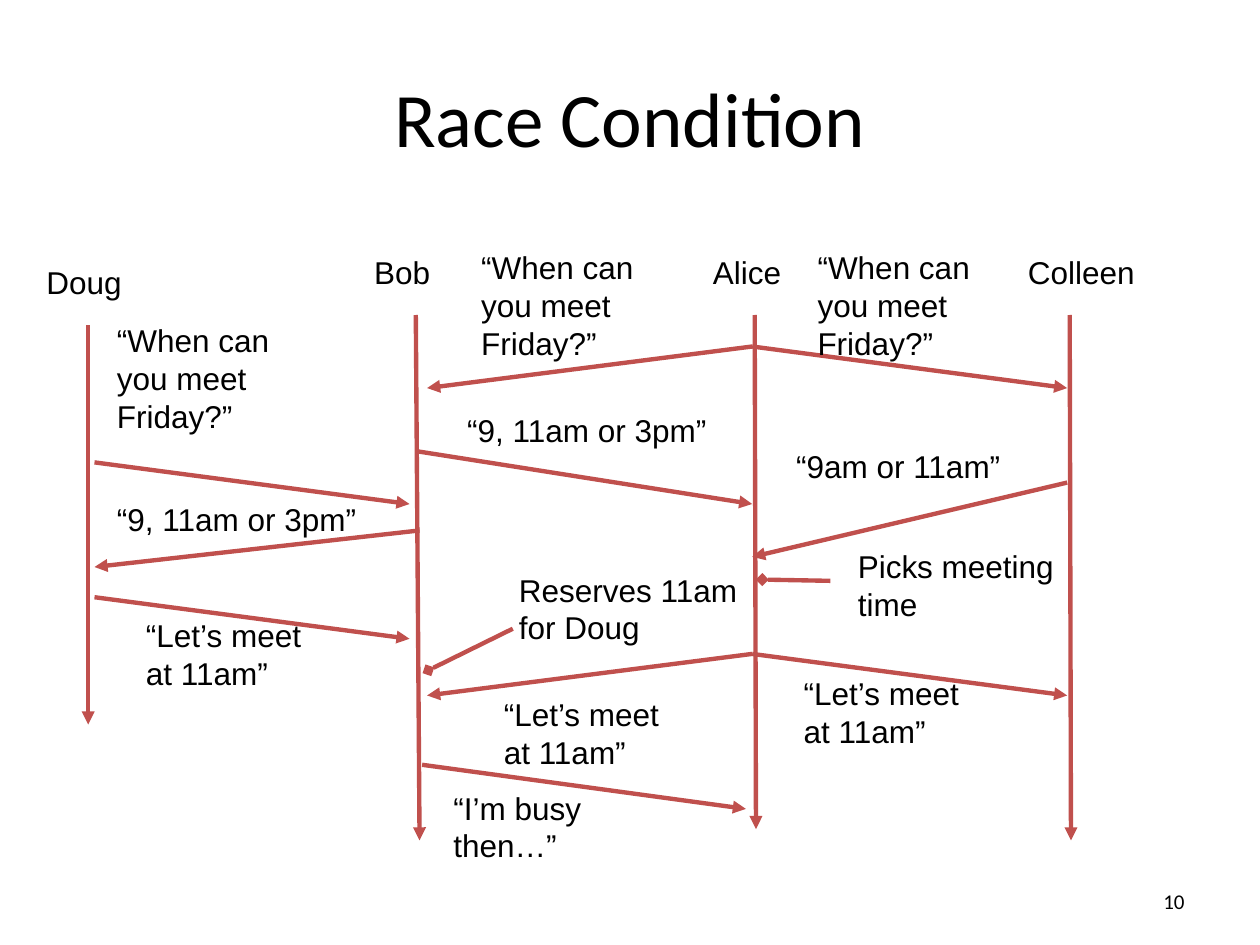
from dataclasses import dataclass

from lxml.etree import SubElement
from pptx import Presentation
from pptx.dml.color import RGBColor
from pptx.enum.shapes import MSO_CONNECTOR as Connector
from pptx.enum.text import MSO_ANCHOR as Anchor, MSO_AUTO_SIZE as AutoSize, PP_ALIGN as Align
from pptx.oxml.ns import qn
from pptx.util import Inches, Pt


@dataclass(frozen=True)
class Theme:
    """Colours, fonts and sizes of the slide."""
    ink: RGBColor = RGBColor(0x00, 0x00, 0x00)
    accent: RGBColor = RGBColor(0xC0, 0x50, 0x4D)
    heading_font: str = "Calibri"
    body_font: str = "Arial"
    title_size: int = 44
    body_size: int = 18
    number_size: int = 12
    line_width: float = 2.5


THEME = Theme()
WIDTH, HEIGHT = Inches(10), Inches(7.5)
COLUMN, ROW = WIDTH / 100, HEIGHT / 75
LINE_ROWS, PADDING_ROWS = 3, 1

ASK = "“When can you meet Friday?”"
OFFER = "“9, 11am or 3pm”"
CONFIRM = "“Let’s meet at 11am”"

LIFELINES = [
    ("Doug", (2.7, 20.4, 8), (7, 25.8), (7, 57.5)),
    ("Bob", (28.7, 19.6, 6.5), (33, 25), (33.3, 66.7)),
    ("Alice", (55.6, 19.6, 7.4), (59.9, 25), (60, 65.8)),
    ("Colleen", (80.6, 19.6, 10.5), (84.9, 25), (85, 66.7)),
]

MESSAGES = [
    (ASK, (37.2, 19.2, 15.8, 3), (59.7, 27.5), (33.9, 30.8)),
    (ASK, (63.9, 19.2, 15.8, 3), (59.7, 27.5), (84.7, 30.8)),
    (OFFER, (36.1, 32.1, 21.7, 1), (33, 35.8), (59.7, 40)),
    ("“9am or 11am”", (62.2, 35, 21.7, 1), (84.7, 38.3), (59.7, 44.2)),
    (CONFIRM, (39, 54.7, 15.8, 2), (59.7, 51.9), (33.9, 55.2)),
    (CONFIRM, (62.8, 53, 15.8, 2), (59.7, 51.9), (84.7, 55.2)),
    (ASK, (8.3, 25, 15.8, 3), (7.5, 36.7), (32.5, 40)),
    (OFFER, (8.3, 39.2, 21.7, 1), (33.3, 42.1), (7.5, 45)),
    (CONFIRM, (10.6, 48.4, 15.8, 2), (7.5, 47.4), (32.5, 50.7)),
    ("“I’m busy then…”", (35, 62.1, 15.8, 2), (33.5, 60.7), (59.2, 64.2)),
]

NOTES = [
    ("Picks meeting time", (67.1, 42.9, 17.6, 2), True, (60.5, 46), (65.9, 46.1)),
    ("Reserves 11am\nfor Doug", (40.2, 44.8, 19.5, 2), False, (34, 53.2), (40.7, 49.9)),
]


def add_text(slide, text, box, font, size, wrap=True, align=Align.LEFT, anchor=Anchor.TOP):
    """Add a text box at left, top, width and height in grid units."""
    left, top, width, height = box
    shape = slide.shapes.add_textbox(
        int(left * COLUMN), int(top * ROW), int(width * COLUMN), int(height * ROW))
    frame = shape.text_frame
    frame.text = text
    frame.word_wrap = wrap
    frame.vertical_anchor = anchor
    for paragraph in frame.paragraphs:
        paragraph.alignment = align
        paragraph.font.name = font
        paragraph.font.size = Pt(size)
        paragraph.font.color.rgb = THEME.ink
    return shape


def add_label(slide, text, place, wrap=True):
    """Add body text whose height follows its number of lines."""
    left, top, width, lines = place
    box = left, top, width, lines * LINE_ROWS + PADDING_ROWS
    shape = add_text(slide, text, box, THEME.body_font, THEME.body_size, wrap)
    shape.text_frame.auto_size = AutoSize.SHAPE_TO_FIT_TEXT


def add_line(slide, start, end, marker="tailEnd", style="triangle"):
    """Add a straight line with a marker at one of its ends."""
    line = slide.shapes.add_connector(
        Connector.STRAIGHT, int(start[0] * COLUMN), int(start[1] * ROW),
        int(end[0] * COLUMN), int(end[1] * ROW))
    line.line.color.rgb = THEME.accent
    line.line.width = Pt(THEME.line_width)
    SubElement(line.line._get_or_add_ln(), qn(f"a:{marker}"), type=style)
    SubElement(line._element.spPr, qn("a:effectLst"))


def add_lifeline(slide, name, place, start, end):
    """Add a participant's name and the time line below it."""
    add_line(slide, start, end)
    add_label(slide, name, (*place, 1), wrap=False)


def add_message(slide, text, place, start, end):
    """Add an arrow between two participants and its wording."""
    add_line(slide, start, end)
    add_label(slide, text, place)


def add_note(slide, text, place, wrap, start, end):
    """Add a remark tied to a time line by a diamond."""
    add_line(slide, start, end, "headEnd", "diamond")
    add_label(slide, text, place, wrap)


def main():
    """Build the slide and save it."""
    presentation = Presentation()
    presentation.slide_width, presentation.slide_height = WIDTH, HEIGHT
    slide = presentation.slides.add_slide(presentation.slide_layouts[6])
    add_text(slide, "Race Condition", (5, 3, 90, 12.5), THEME.heading_font,
             THEME.title_size, align=Align.CENTER, anchor=Anchor.MIDDLE)
    add_text(slide, "10", (71.7, 69.5, 23.3, 4), THEME.heading_font,
             THEME.number_size, align=Align.RIGHT, anchor=Anchor.MIDDLE)
    for lifeline in LIFELINES:
        add_lifeline(slide, *lifeline)
    for message in MESSAGES:
        add_message(slide, *message)
    for note in NOTES:
        add_note(slide, *note)
    presentation.save("out.pptx")


if __name__ == "__main__":
    main()
